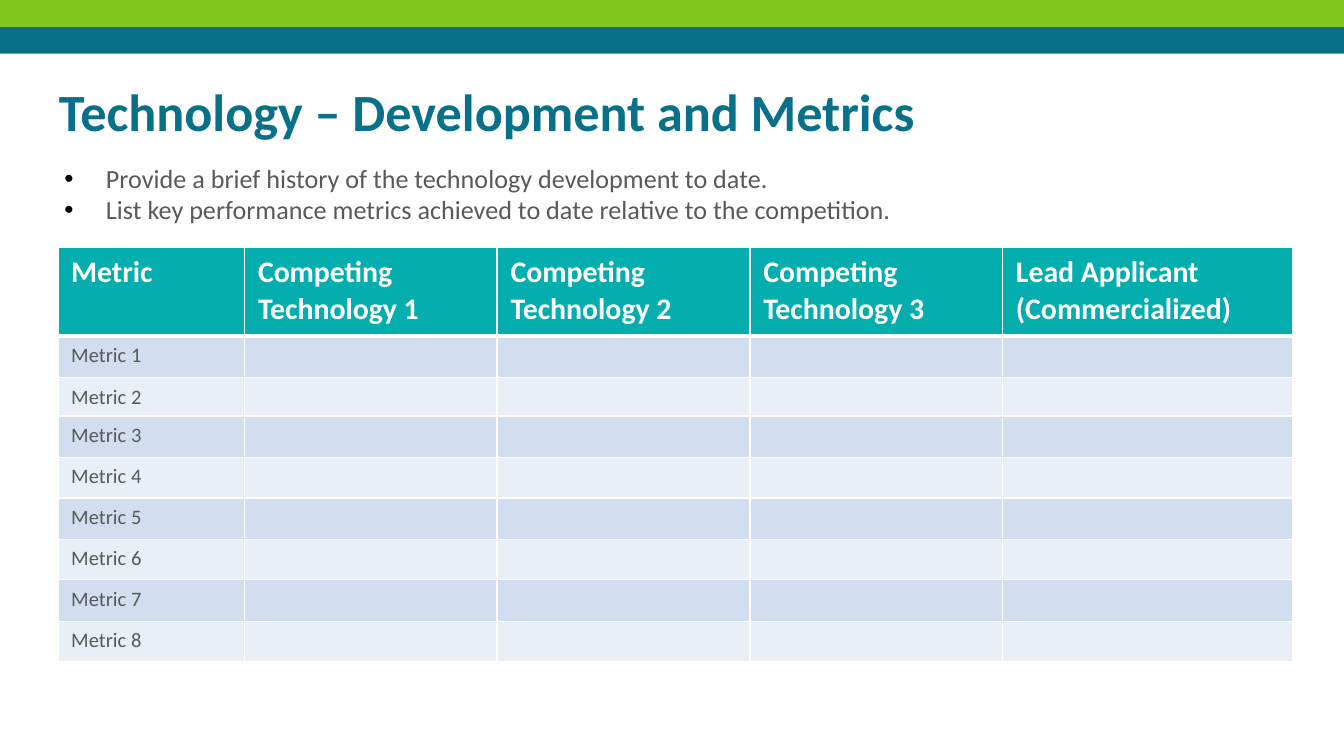
from lxml import etree
from pptx import Presentation
from pptx.dml.color import RGBColor
from pptx.enum.shapes import MSO_SHAPE
from pptx.enum.text import MSO_ANCHOR
from pptx.oxml.ns import qn
from pptx.util import Inches, Pt

RECTANGLE = MSO_SHAPE.RECTANGLE
TOP = MSO_ANCHOR.TOP

SLIDE_WIDTH = 10
SLIDE_HEIGHT = SLIDE_WIDTH * 9 / 16

FONT = "Calibri"
BLUE, GREEN, TEAL = "09708A", "80C41C", "05AEAE"
WHITE, GREY, BLACK = "FFFFFF", "595959", "000000"
ROW_FILLS = ("D2DEEF", "EAEFF7")

BULLETS = [
    "Provide a brief history of the technology development to date.",
    "List key performance metrics achieved to date relative to the competition.",
]
HEADERS = [
    "Metric",
    *(f"Competing\nTechnology {number}" for number in range(1, 4)),
    "Lead Applicant (Commercialized)",
]
COLUMN_WIDTHS = [1.39, 1.88, 1.88, 1.88, 2.16]
HEADER_HEIGHT = 0.66
METRIC_HEIGHTS = [0.31, 0.28, 0.31, 0.3, 0.31, 0.3, 0.31, 0.3]


def color(value):
    return RGBColor.from_string(value)


def style_paragraph(paragraph, size, font_color, bold=False):
    font = paragraph.font
    font.name = FONT
    font.size = Pt(size)
    font.bold = bold
    font.color.rgb = color(font_color)


def add_band(slide, top, fill):
    shape = slide.shapes.add_shape(
        RECTANGLE, 0, Inches(top), Inches(SLIDE_WIDTH), Inches(0.2))
    shape.shadow.inherit = False
    shape.fill.solid()
    shape.fill.fore_color.rgb = color(fill)
    shape.line.fill.background()


def add_text_box(slide, left, top, width, height, lines):
    shape = slide.shapes.add_textbox(
        Inches(left), Inches(top), Inches(width), Inches(height))
    frame = shape.text_frame
    frame.word_wrap = True
    frame.vertical_anchor = TOP
    frame.text = "\n".join(lines)
    return frame


def add_title(slide, text):
    frame = add_text_box(slide, 0.34, 0.49, 9.32, 0.63, [text])
    frame.margin_top = frame.margin_bottom = Inches(0.1)
    style_paragraph(frame.paragraphs[0], 28, BLUE, bold=True)


def set_bullet(paragraph):
    properties = paragraph._p.get_or_add_pPr()
    properties.set("marL", str(Inches(0.31)))
    properties.set("indent", str(-Inches(0.31)))
    bullet_color = etree.SubElement(properties, qn("a:buClr"))
    etree.SubElement(bullet_color, qn("a:srgbClr"), val=BLACK)
    etree.SubElement(properties, qn("a:buFont"), typeface="Arial")
    etree.SubElement(properties, qn("a:buChar"), char="•")


def add_bullets(slide, lines):
    frame = add_text_box(slide, 0.38, 1.16, 9.28, 0.63, lines)
    for paragraph in frame.paragraphs:
        set_bullet(paragraph)
        style_paragraph(paragraph, 14, GREY)


def set_borders(cell, top, bottom):
    """Draw white borders; top and bottom are widths in points."""
    properties = cell._tc.get_or_add_tcPr()
    for side, width in (("L", 1), ("R", 1), ("T", top), ("B", bottom)):
        line = etree.SubElement(properties, qn(f"a:ln{side}"), w=str(Pt(width)))
        fill = etree.SubElement(line, qn("a:solidFill"))
        etree.SubElement(fill, qn("a:srgbClr"), val=WHITE)


def fill_cell(cell, text, fill, size, font_color, bold=False, top=1, bottom=1):
    cell.text = text
    set_borders(cell, top, bottom)
    cell.fill.solid()
    cell.fill.fore_color.rgb = color(fill)
    for paragraph in cell.text_frame.paragraphs:
        style_paragraph(paragraph, size, font_color, bold)
        if not text:  # keeps an empty row from growing to the default size
            etree.SubElement(paragraph._p, qn("a:endParaRPr"), sz=str(size * 100))


def add_metrics_table(slide):
    heights = [HEADER_HEIGHT, *METRIC_HEIGHTS]
    table = slide.shapes.add_table(
        len(heights), len(HEADERS), Inches(0.43), Inches(1.84),
        Inches(sum(COLUMN_WIDTHS)), Inches(sum(heights))).table
    for column, width in zip(table.columns, COLUMN_WIDTHS):
        column.width = Inches(width)
    for row, height in zip(table.rows, heights):
        row.height = Inches(height)
    for column, header in enumerate(HEADERS):
        fill_cell(table.cell(0, column), header, TEAL, 16, WHITE, bold=True, bottom=3)
        for row in range(1, len(heights)):
            text = f"Metric {row}" if column == 0 else ""
            fill = ROW_FILLS[(row - 1) % 2]
            fill_cell(table.cell(row, column), text, fill, 11, GREY,
                      top=3 if row == 1 else 1)


def main():
    presentation = Presentation()
    presentation.slide_width = Inches(SLIDE_WIDTH)
    presentation.slide_height = Inches(SLIDE_HEIGHT)
    slide = presentation.slides.add_slide(presentation.slide_layouts[6])
    add_band(slide, 0.2, BLUE)
    add_band(slide, 0, GREEN)
    add_title(slide, "Technology – Development and Metrics")
    add_bullets(slide, BULLETS)
    add_metrics_table(slide)
    presentation.save("out.pptx")


if __name__ == "__main__":
    main()
